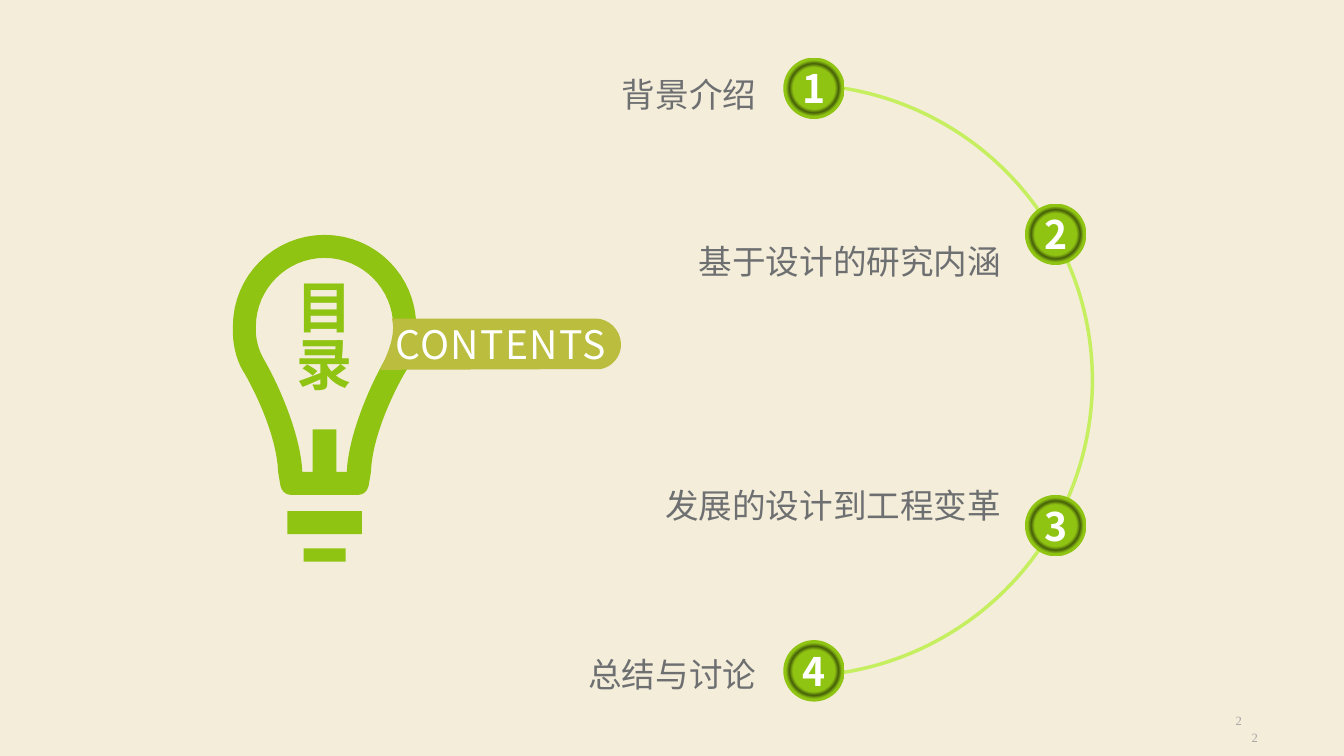
from dataclasses import dataclass
from typing import NamedTuple

from lxml.etree import SubElement
from pptx import Presentation
from pptx.dml.color import RGBColor as Rgb
from pptx.enum.shapes import MSO_SHAPE as Kind
from pptx.enum.text import MSO_ANCHOR as Anchor, MSO_AUTO_SIZE as Fit, PP_ALIGN as Align
from pptx.oxml import parse_xml
from pptx.oxml.ns import qn
from pptx.util import Cm, Pt


@dataclass(frozen=True)
class Theme:
    paper: str = "F4EDDA"
    green: str = "90C413"
    dark: str = "486209"
    lime: str = "C5EF5E"
    olive: str = "BABD3D"
    ink: str = "6D6F71"
    white: str = "FFFFFF"
    pale: str = "A6A6A6"
    sans: str = "Noto Sans CJK SC"
    serif: str = "Times New Roman"
    head: int = 40
    mark: int = 28
    item: int = 24
    page: int = 9


class Box(NamedTuple):
    left: float
    top: float
    width: float
    height: float


class Style(NamedTuple):
    size: int
    color: str
    align: Align
    font: str
    bold: bool = False
    gap: int = 0
    line: float = 1.0


class Topic(NamedTuple):
    text: str
    left: float
    top: float
    disc_x: float
    disc_y: float


# A step is a line (x, y) or a cubic curve (x1, y1, x2, y2, x, y), in cm
Step = tuple[float, ...]
Dots = list[tuple[float, float]]

T = Theme()
HEAD = Style(T.head, T.green, Align.CENTER, T.sans, bold=True, line=0.84)
MARK = Style(T.mark, T.white, Align.CENTER, T.sans, bold=True)
TAG = Style(T.mark, T.white, Align.CENTER, T.sans, gap=100)
ITEM = Style(T.item, T.ink, Align.RIGHT, T.sans, line=1.2)
PAGE = Style(T.page, T.pale, Align.RIGHT, T.serif)

DISC = 1.55
TOPICS = [
    Topic("背景介绍", 9.58, 0.74, 19.74, 1.45),
    Topic("基于设计的研究内涵", 15.75, 4.95, 25.83, 5.13),
    Topic("发展的设计到工程变革", 15.75, 11.1, 25.83, 12.47),
    Topic("总结与讨论", 9.58, 15.37, 19.74, 16.13),
]
PAGES = [Box(24.33, 18.08, 7.62, 1.02), Box(23.93, 17.65, 7.62, 1.02)]

# Right halves of the bulb's outlines, measured from its axis
AXIS = 8.18
GLASS: list[Step] = [
    (0, 5.92), (1.28, 5.92, 2.31, 6.95, 2.31, 8.23), (2.31, 8.43),
    (2.29, 8.85, 2.16, 9.2, 2.01, 9.42), (1.67, 10.02, 1.2, 11.05, 1.17, 11.89),
    (1.12, 12.19), (1.1, 12.35, 1, 12.47, 0.84, 12.47),
]
HOLE: list[Step] = [
    (0, 6.5), (0.95, 6.5, 1.73, 7.28, 1.73, 8.23), (1.73, 8.41),
    (1.7, 8.7, 1.62, 8.9, 1.52, 9.07), (1.1, 9.8, 0.6, 11, 0.56, 11.89),
    (0.3, 11.89), (0.3, 10.82),
]
BARS: list[list[Step]] = [[(0.94, 12.88), (0.94, 13.46)], [(0.53, 13.82), (0.53, 14.15)]]
FLAG: list[Step] = [
    (9.88, 8.03), (15.01, 8.03), (15.36, 8.03, 15.65, 8.33, 15.65, 8.69),
    (15.65, 8.99, 15.42, 9.25, 15.14, 9.3), (9.58, 9.32),
    (9.78, 8.89, 9.98, 8.46, 9.88, 8.03),
]


def trace(steps: list[Step], count: int = 16) -> Dots:
    dots: Dots = []
    for step in steps:
        if len(step) == 2:
            dots.append(step)
            continue
        ends = [dots[-1], step[:2], step[2:4], step[4:]]
        for i in range(1, count + 1):
            t = i / count
            parts = ((1 - t) ** 3, 3 * t * (1 - t) ** 2, 3 * t * t * (1 - t), t ** 3)
            dots.append(tuple(sum(w * p[k] for w, p in zip(parts, ends)) for k in (0, 1)))
    return dots


def mirror(steps: list[Step]) -> Dots:
    half = trace(steps)
    return [(AXIS + x, y) for x, y in half] + [(AXIS - x, y) for x, y in reversed(half)]


def place(box: Box) -> list[Cm]:
    return [Cm(v) for v in box]


def write(shape, text: str, style: Style, inset: float = 0, wrap: bool = True) -> None:
    frame = shape.text_frame
    frame.text = text
    frame.word_wrap = wrap
    frame.auto_size = Fit.NONE
    frame.vertical_anchor = Anchor.MIDDLE
    frame.margin_left = frame.margin_right = Cm(inset)
    frame.margin_top = frame.margin_bottom = Cm(inset / 2)
    for para in frame.paragraphs:
        para.alignment = style.align
        para.line_spacing = style.line
        for run in para.runs:
            font = run.font
            font.size, font.bold, font.name = Pt(style.size), style.bold, style.font
            font.color.rgb = Rgb.from_string(style.color)
            props = run._r.get_or_add_rPr()
            SubElement(props, qn("a:ea")).set("typeface", style.font)
            if style.gap:
                props.set("spc", str(style.gap))


def label(slide, box: Box, text: str, style: Style) -> None:
    write(slide.shapes.add_textbox(*place(box)), text, style, inset=0.25)


def outline(slide, loops: list[Dots], color: str):
    loops = [[(Cm(x), Cm(y)) for x, y in loop] for loop in loops]
    pen = slide.shapes.build_freeform(*loops[0][0])
    for i, loop in enumerate(loops):
        if i:
            pen.move_to(*loop[0])
        pen.add_line_segments(loop[1:], close=True)
    shape = pen.convert_to_shape()
    shape.shadow.inherit = False
    shape.fill.solid()
    shape.fill.fore_color.rgb = Rgb.from_string(color)
    shape.line.fill.background()
    return shape


def badge(slide, topic: Topic, text: str) -> None:
    box = Box(topic.disc_x, topic.disc_y, DISC, DISC)
    disc = slide.shapes.add_shape(Kind.OVAL, *place(box))
    disc.shadow.inherit = False
    disc.line.fill.background()
    disc.fill.gradient()
    stops = "".join(
        f'<a:gs pos="{pos}000"><a:srgbClr val="{color}"/></a:gs>'
        for pos, color in ((48, T.green), (56, T.dark), (64, T.green)))
    ring = parse_xml(
        '<a:gradFill xmlns:a="http://schemas.openxmlformats.org/drawingml/2006/main" '
        f'rotWithShape="1"><a:gsLst>{stops}</a:gsLst><a:path path="circle">'
        '<a:fillToRect l="50000" t="50000" r="50000" b="50000"/></a:path></a:gradFill>')
    props = disc._element.spPr
    props.replace(props.find(qn("a:gradFill")), ring)
    write(disc, text, MARK, wrap=False)


def main() -> None:
    deck = Presentation()
    deck.slide_width, deck.slide_height = Cm(33.87), Cm(19.05)
    slide = deck.slides.add_slide(deck.slide_layouts[5])
    slide.background.fill.solid()
    slide.background.fill.fore_color.rgb = Rgb.from_string(T.paper)

    # Arc with numbered topics
    arc = slide.shapes.add_shape(Kind.ARC, *place(Box(12.62, 2.13, 14.91, 14.91)))
    arc.shadow.inherit = False
    arc.fill.background()
    arc.line.color.rgb = Rgb.from_string(T.lime)
    arc.line.width = Pt(2.5)
    for i, degrees in enumerate((276, 84)):
        arc.adjustments[i] = degrees * 0.6
    for i, topic in enumerate(TOPICS, 1):
        badge(slide, topic, str(i))
        label(slide, Box(topic.left, topic.top, 9.73, 3.05), topic.text, ITEM)

    # Bulb with title and flag
    outline(slide, [mirror(half) for half in (GLASS, HOLE, *BARS)], T.green)
    title = slide.shapes.title
    title.left, title.top, title.width, title.height = place(Box(5.87, 6.05, 4.62, 5.03))
    write(title, "目\n录", HEAD)
    write(outline(slide, [trace(FLAG)], T.olive), "CONTENTS", TAG, wrap=False)

    # Page numbers
    for box in PAGES:
        label(slide, box, "2", PAGE)
    deck.save("out.pptx")


if __name__ == "__main__":
    main()
